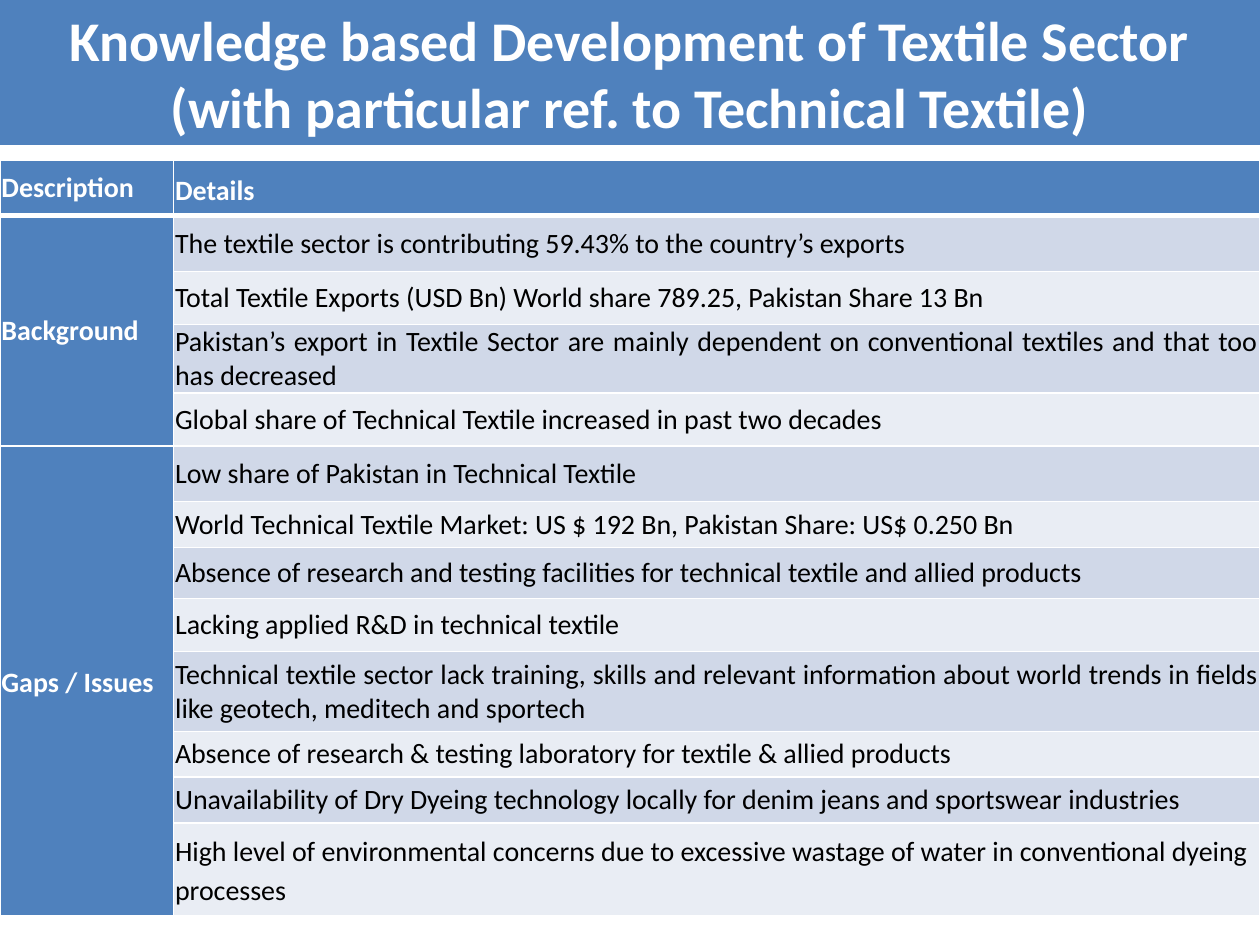
from dataclasses import dataclass
from typing import Optional

from lxml.etree import SubElement
from pptx import Presentation
from pptx.dml.color import RGBColor
from pptx.enum.shapes import MSO_SHAPE
from pptx.enum.text import MSO_ANCHOR, PP_ALIGN
from pptx.oxml.ns import qn
from pptx.util import Cm, Pt


@dataclass(frozen=True)
class Theme:
    font: str = "Calibri"
    title_size: int = 32
    body_size: int = 16
    blue: str = "4F81BD"
    bands: tuple = ("D0D8E8", "E9EDF4")
    white: str = "FFFFFF"
    black: str = "000000"
    line: float = 1
    header_line: float = 3


@dataclass(frozen=True)
class Detail:
    text: str
    height: float
    align: Optional[PP_ALIGN] = PP_ALIGN.JUSTIFY
    spacing: Optional[float] = None


@dataclass(frozen=True)
class Section:
    label: Detail
    details: tuple


THEME = Theme()
SLIDE_WIDTH, SLIDE_HEIGHT = 25.4, 19.05
TITLE = "Knowledge based Development of Textile Sector (with particular ref. to Technical Textile)"
TITLE_HEIGHT = 2.92
TABLE_TOP = 3.23
LABEL_WIDTH = 3.5

HEADER = (Detail("Description", 1.12), Detail("Details", 1.12, None, 1.15))
SECTIONS = (
    Section(Detail("Background", 0), (
        Detail("The textile sector is contributing 59.43% to the country’s exports", 1.12),
        Detail("Total Textile Exports (USD Bn) World share 789.25, Pakistan Share 13 Bn", 1.07),
        Detail("Pakistan’s export in Textile Sector are mainly dependent on conventional "
               "textiles and that too has decreased", 1.07),
        Detail("Global share of Technical Textile increased in past two decades", 1.07),
    )),
    Section(Detail("Gaps / Issues", 0, None, 1.15), (
        Detail("Low share of Pakistan in Technical Textile", 1.12),
        Detail("World Technical Textile Market: US $ 192 Bn, Pakistan Share: US$ 0.250 Bn", 0.93),
        Detail("Absence of research and testing facilities for technical textile and allied products", 1.02),
        Detail("Lacking applied R&D in technical textile", 1.07),
        Detail("Technical textile sector lack training, skills and relevant information about "
               "world trends in fields like geotech, meditech and sportech", 1.62),
        Detail("Absence of research & testing laboratory for textile & allied products", 0.91),
        Detail("Unavailability of Dry Dyeing technology locally for denim jeans and sportswear industries", 0.93),
        Detail("High level of environmental concerns due to excessive wastage of water in "
               "conventional dyeing processes", 1.86, None, 1.15),
    )),
)


def set_font(paragraph, size: int, color: str, bold: bool) -> None:
    font = paragraph.font
    font.name, font.size, font.bold = THEME.font, Pt(size), bold
    font.color.rgb = RGBColor.from_string(color)


def set_borders(cell, top: float, bottom: float) -> None:
    """Put a white line on each side, ahead of the fill in the cell properties."""
    properties = cell._tc.get_or_add_tcPr()
    widths = {"a:lnL": THEME.line, "a:lnR": THEME.line, "a:lnT": top, "a:lnB": bottom}
    for index, (tag, width) in enumerate(widths.items()):
        line = SubElement(properties, qn(tag), w=str(Pt(width)))
        SubElement(SubElement(line, qn("a:solidFill")), qn("a:srgbClr"), val=THEME.white)
        properties.insert(index, line)


def fill_cell(cell, detail: Detail, fill: str, color: str, bold: bool) -> None:
    cell.fill.solid()
    cell.fill.fore_color.rgb = RGBColor.from_string(fill)
    cell.vertical_anchor = MSO_ANCHOR.MIDDLE
    cell.margin_left = cell.margin_right = Cm(0.03)
    cell.margin_top = cell.margin_bottom = 0
    cell.text = detail.text
    paragraph = cell.text_frame.paragraphs[0]
    paragraph.alignment = detail.align
    paragraph.line_spacing = detail.spacing
    set_font(paragraph, THEME.body_size, color, bold)


def add_title(slide) -> None:
    shape = slide.shapes.add_shape(MSO_SHAPE.RECTANGLE, 0, 0, Cm(SLIDE_WIDTH), Cm(TITLE_HEIGHT))
    shape.shadow.inherit = False
    shape.fill.solid()
    shape.fill.fore_color.rgb = RGBColor.from_string(THEME.blue)
    shape.line.fill.background()
    frame = shape.text_frame
    frame.word_wrap = True
    frame.vertical_anchor = MSO_ANCHOR.MIDDLE
    paragraph = frame.paragraphs[0]
    paragraph.text = TITLE
    paragraph.alignment = PP_ALIGN.CENTER
    set_font(paragraph, THEME.title_size, THEME.white, True)


def add_details_table(slide) -> None:
    heights = [HEADER[0].height] + [d.height for s in SECTIONS for d in s.details]
    table = slide.shapes.add_table(len(heights), 2, 0, Cm(TABLE_TOP),
                                   Cm(SLIDE_WIDTH), Cm(sum(heights))).table
    for column, width in zip(table.columns, (LABEL_WIDTH, SLIDE_WIDTH - LABEL_WIDTH)):
        column.width = Cm(width)
    for row, height in zip(table.rows, heights):
        row.height = Cm(height)

    # Header row
    for column, heading in enumerate(HEADER):
        fill_cell(table.cell(0, column), heading, THEME.blue, THEME.white, True)

    # Sections: one merged label beside banded details
    first = 1
    for section in SECTIONS:
        last = first + len(section.details) - 1
        label = table.cell(first, 0)
        label.merge(table.cell(last, 0))
        fill_cell(label, section.label, THEME.blue, THEME.white, True)
        for row, detail in enumerate(section.details, first):
            fill_cell(table.cell(row, 1), detail, THEME.bands[(row - 1) % 2], THEME.black, False)
        first = last + 1

    # Grid lines, thicker under the header
    for row in range(len(heights)):
        for column in range(2):
            set_borders(table.cell(row, column),
                        top=THEME.header_line if row == 1 else THEME.line,
                        bottom=THEME.header_line if row == 0 else THEME.line)


def main() -> None:
    presentation = Presentation()
    presentation.slide_width, presentation.slide_height = Cm(SLIDE_WIDTH), Cm(SLIDE_HEIGHT)
    slide = presentation.slides.add_slide(presentation.slide_layouts[6])
    add_title(slide)
    add_details_table(slide)
    presentation.save("out.pptx")


if __name__ == "__main__":
    main()
